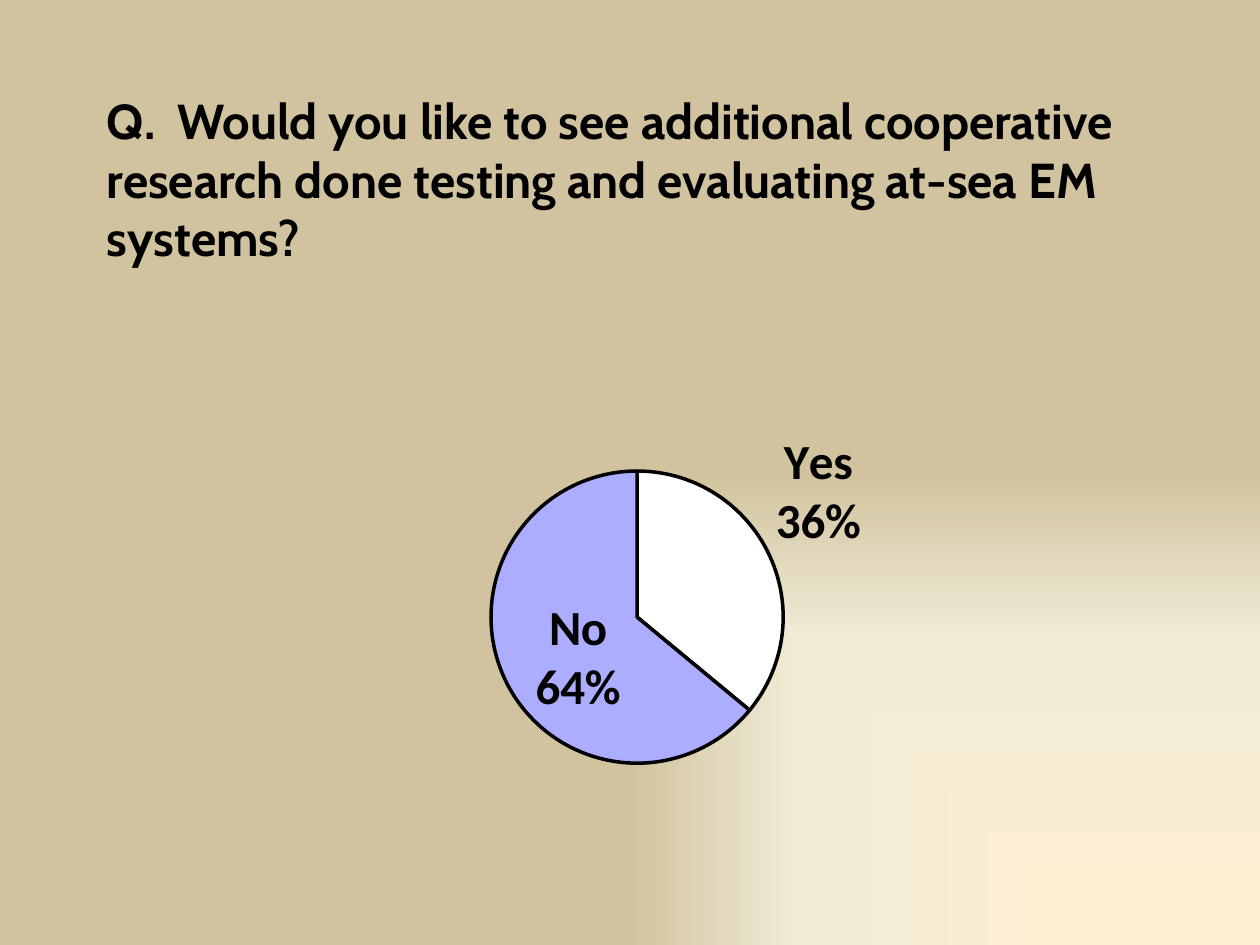
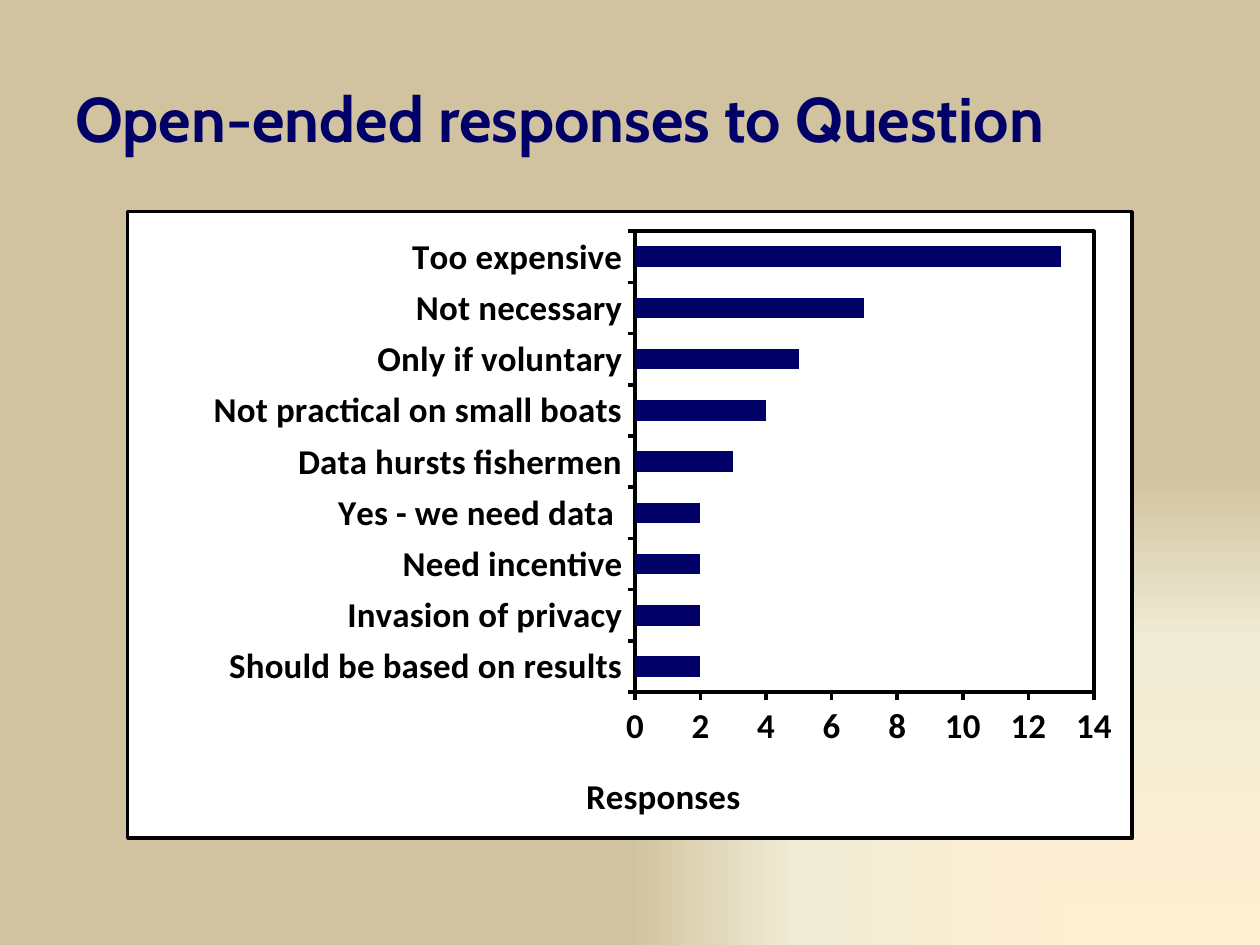
from pptx import Presentation
from pptx.chart.data import CategoryChartData
from pptx.dml.color import RGBColor
from pptx.enum.chart import XL_CHART_TYPE, XL_LABEL_POSITION, XL_TICK_MARK
from pptx.oxml import parse_xml
from pptx.oxml.ns import nsdecls, qn
from pptx.util import Pt

BLACK = RGBColor(0, 0, 0)
WHITE = RGBColor(0xFF, 0xFF, 0xFF)
NAVY = RGBColor(0, 0, 0x66)
LILAC = RGBColor(0xAD, 0xAD, 0xFF)
GLOW = [(0, RGBColor(0xFF, 0xEF, 0xD1)), (65, RGBColor(0xF0, 0xEB, 0xD5)),
        (100, RGBColor(0xD1, 0xC3, 0x9F))]
HEAD, BODY, BASE = "Cabin", "Calibri", "Cambria"

QUERY = ("Q.  Would you like to see additional cooperative research done "
         "testing and evaluating at-sea EM systems?")
VOTES = [("Yes", 36, WHITE, XL_LABEL_POSITION.OUTSIDE_END, (0, 0)),
         ("No", 64, LILAC, XL_LABEL_POSITION.CENTER, (1, 2))]
TOPIC = "Open-ended responses to Question"
UNIT = "Responses"
REASONS = [
    ("Should be based on results", 2),
    ("Invasion of privacy", 2),
    ("Need incentive", 2),
    ("Yes - we need data ", 2),
    ("Data hursts fishermen", 3),
    ("Not practical on small boats", 4),
    ("Only if voluntary", 5),
    ("Not necessary", 7),
    ("Too expensive", 13),
]


def style(font, size, name=BODY, color=BLACK, bold=True):
    font.size, font.name, font.bold = Pt(size), name, bold
    font.color.rgb = color


def add_text(slide, text, left, top, width, height, **form):
    box = slide.shapes.add_textbox(Pt(left), Pt(top), Pt(width), Pt(height))
    box.text_frame.word_wrap = True
    run = box.text_frame.paragraphs[0].add_run()
    run.text = text
    style(run.font, **form)


def add_slide(deck):
    slide = deck.slides.add_slide(deck.slide_layouts[6])
    slide.background.fill.solid()
    stops = "".join(f'<a:gs pos="{pos * 1000}"><a:srgbClr val="{tone}"/></a:gs>'
                    for pos, tone in GLOW)
    glow = parse_xml(
        f'<a:gradFill {nsdecls("a")} rotWithShape="1"><a:gsLst>{stops}</a:gsLst>'
        '<a:path path="rect"><a:fillToRect l="100000" t="100000"/></a:path></a:gradFill>')
    solid = next(slide.element.iter(qn("a:solidFill")))
    solid.getparent().replace(solid, glow)
    return slide


def add_chart(slide, kind, pairs, left, top, width, height):
    data = CategoryChartData()
    data.categories = [name for name, _ in pairs]
    data.add_series("Series 1", [count for _, count in pairs])
    frame = slide.shapes.add_chart(kind, Pt(left), Pt(top), Pt(width), Pt(height), data)
    chart = frame.chart
    chart.has_title = chart.has_legend = False
    style(chart.font, 10, BASE, bold=False)
    return chart


def frame_xml(fill=None, line=None):
    def paint(tone):
        return (f'<a:solidFill><a:srgbClr val="{tone}"/></a:solidFill>'
                if tone is not None else "<a:noFill/>")
    return parse_xml(f'<c:spPr {nsdecls("c", "a")}>{paint(fill)}'
                     f'<a:ln w="{Pt(2)}">{paint(line)}</a:ln></c:spPr>')


def fill_chart(chart, **paint):
    chart.element.find(qn("c:chart")).addnext(frame_xml(**paint))


def place(part, index, edge=True, **spots):
    for old in part.findall(qn("c:layout")):
        part.remove(old)
    inner = '<c:layoutTarget val="inner"/>' if "w" in spots else ""
    modes = '<c:xMode val="edge"/><c:yMode val="edge"/>' if edge else ""
    sizes = "".join(f'<c:{key} val="{val / 100}"/>' for key, val in spots.items())
    part.insert(index, parse_xml(
        f'<c:layout {nsdecls("c")}><c:manualLayout>{inner}{modes}{sizes}'
        '</c:manualLayout></c:layout>'))


def draw_pie(slide):
    chart = add_chart(slide, XL_CHART_TYPE.PIE, [vote[:2] for vote in VOTES],
                      156, 192, 408, 288)
    fill_chart(chart)
    place(next(chart.element.iter(qn("c:plotArea"))), 0, x=30, y=26.8, w=42, h=58)
    series = chart.plots[0].series[0]
    for index, (_, _, color, spot, _) in enumerate(VOTES):
        point = series.points[index]
        point.format.fill.solid()
        point.format.fill.fore_color.rgb = color
        point.format.line.color.rgb = BLACK
        point.format.line.width = Pt(2)
        style(point.data_label.font, 28)
        point.data_label.position = spot
    for label, vote in zip(chart.element.iter(qn("c:dLbl")), VOTES):
        for tag, flag in (("Val", 0), ("CatName", 1), ("Percent", 1)):
            label.find(qn("c:show" + tag)).set("val", str(flag))
        label.find(qn("c:idx")).addnext(parse_xml(
            f'<c:numFmt {nsdecls("c")} formatCode="0%" sourceLinked="0"/>'))
        label.append(parse_xml(f'<c:separator {nsdecls("c")}>\n</c:separator>'))
        right, down = vote[-1]
        if right or down:
            place(label, 1, edge=False, x=right, y=down)


def draw_bars(slide):
    chart = add_chart(slide, XL_CHART_TYPE.BAR_CLUSTERED, REASONS, 72, 120, 576, 360)
    fill_chart(chart, fill=WHITE, line=BLACK)
    area = next(chart.element.iter(qn("c:plotArea")))
    place(area, 0, x=50.5, y=3.1, w=45.7, h=73.6)
    area.append(frame_xml(line=BLACK))
    plot = chart.plots[0]
    plot.gap_width = 150
    plot.vary_by_categories = False
    fill = plot.series[0].format.fill
    fill.solid()
    fill.fore_color.rgb = NAVY
    for axis in (chart.category_axis, chart.value_axis):
        axis.has_major_gridlines = False
        axis.major_tick_mark = XL_TICK_MARK.OUTSIDE
        axis.minor_tick_mark = XL_TICK_MARK.NONE
        axis.format.line.color.rgb = BLACK
        axis.format.line.width = Pt(2)
        style(axis.tick_labels.font, 20)
    scale = chart.value_axis
    scale.minimum_scale, scale.maximum_scale, scale.major_unit = 0, 14, 2
    run = scale.axis_title.text_frame.paragraphs[0].add_run()
    run.text = UNIT
    style(run.font, 20)
    place(next(chart.element.iter(qn("c:title"))), 1, x=45, y=88.3)


def main():
    deck = Presentation()
    deck.slide_width, deck.slide_height = Pt(720), Pt(540)
    poll = add_slide(deck)
    draw_pie(poll)
    add_text(poll, QUERY, 54, 48, 618, 48, size=28, name=HEAD)
    replies = add_slide(deck)
    add_text(replies, TOPIC, 36, 42, 648, 48, size=36, name=HEAD, color=NAVY)
    draw_bars(replies)
    deck.save("out.pptx")


if __name__ == "__main__":
    main()
